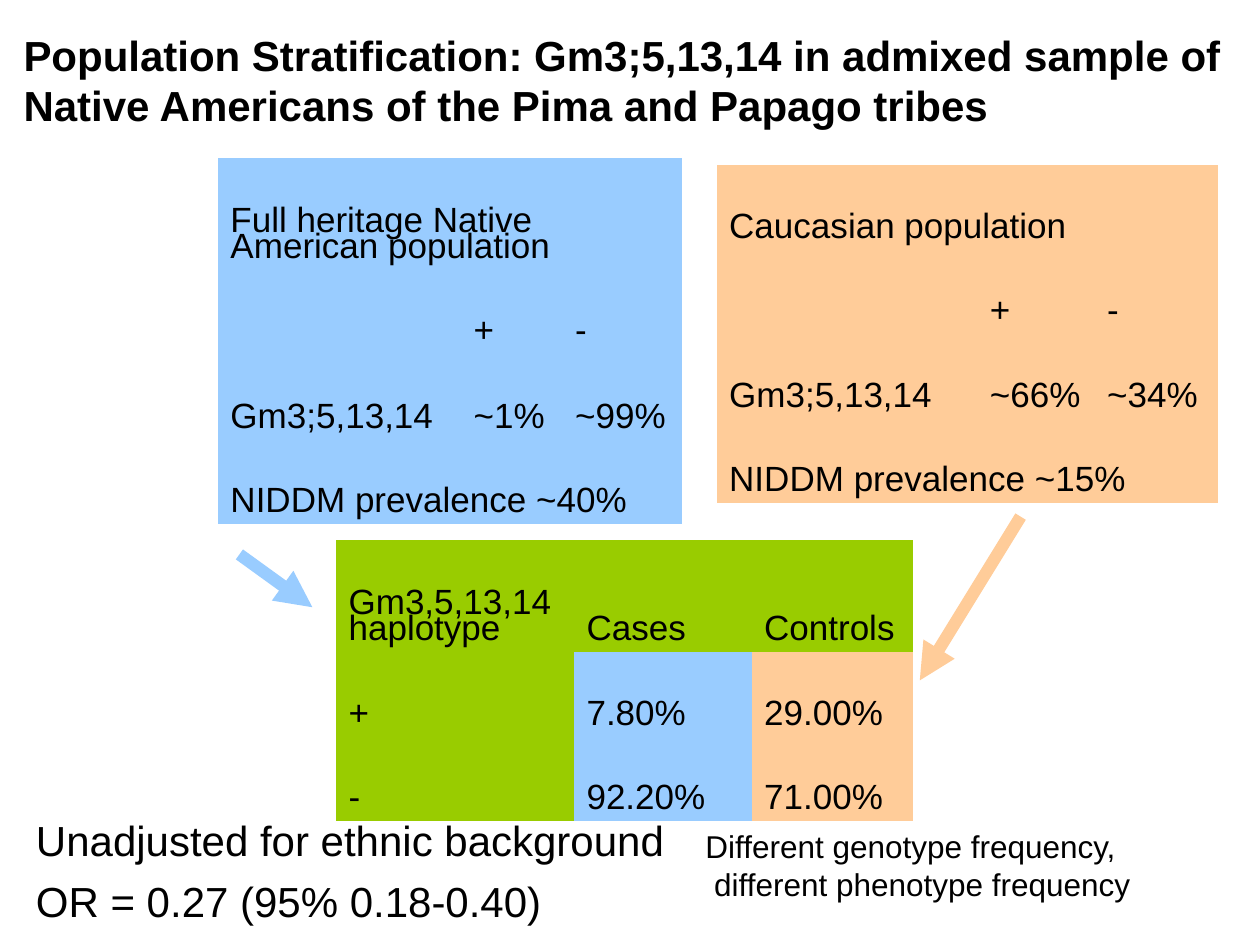
from dataclasses import dataclass

from pptx import Presentation
from pptx.dml.color import RGBColor
from pptx.enum.shapes import MSO_CONNECTOR
from pptx.enum.text import MSO_ANCHOR, MSO_AUTO_SIZE, PP_ALIGN
from pptx.oxml.ns import qn
from pptx.util import Pt
from lxml.etree import SubElement


@dataclass(frozen=True)
class Theme:
    """Colours, font and type sizes of the slide."""
    font: str = "Arial"
    text: RGBColor = RGBColor(0x00, 0x00, 0x00)
    native: RGBColor = RGBColor(0x99, 0xCC, 0xFF)
    caucasian: RGBColor = RGBColor(0xFF, 0xCC, 0x99)
    admixed: RGBColor = RGBColor(0x99, 0xCC, 0x00)
    title_size: int = 24
    table_size: int = 20
    note_size: int = 18
    arrow_width: int = 7


THEME = Theme()
NO_GRID = "{2D5ABB26-0587-4C30-8999-92F81FD0307C}"


def format_text(tf, size, bold=False, spacing=None, before=None):
    """Give every paragraph the theme font and the stated spacing."""
    for p in tf.paragraphs:
        p.alignment = PP_ALIGN.LEFT
        p.line_spacing = spacing
        p.space_before = None if before is None else Pt(before)
        for r in p.runs:
            r.font.name = THEME.font
            r.font.size = Pt(size)
            r.font.bold = bold
            r.font.color.rgb = THEME.text


def add_title(s, box, text):
    """Place the slide title in its placeholder."""
    sp = s.shapes.title
    sp.left, sp.top, sp.width, sp.height = (Pt(v) for v in box)
    tf = sp.text_frame
    tf.text = text
    tf.word_wrap = True
    tf.auto_size = MSO_AUTO_SIZE.NONE
    tf.vertical_anchor = MSO_ANCHOR.TOP
    format_text(tf, THEME.title_size, bold=True)


def add_note(s, box, text, size, spacing=None, before=None):
    """Place a wrapped text box."""
    tf = s.shapes.add_textbox(*(Pt(v) for v in box)).text_frame
    tf.word_wrap = True
    tf.text = text
    format_text(tf, size, spacing=spacing, before=before)


def format_cell(cell, text, fill):
    """Fill one cell and set its text at the bottom."""
    cell.fill.solid()
    cell.fill.fore_color.rgb = fill
    if text:
        cell.text = text
        cell.vertical_anchor = MSO_ANCHOR.BOTTOM
        cell.margin_top = Pt(28.8)
        format_text(cell.text_frame, THEME.table_size, spacing=0.66)


def add_grid(s, left, top, widths, heights, rows, fills):
    """Add a borderless table with a fill for every cell."""
    frame = s.shapes.add_table(len(heights), len(widths), Pt(left), Pt(top),
                               Pt(sum(widths)), Pt(sum(heights)))
    table = frame.table
    table.first_row = table.horz_banding = False
    for style in frame.element.iter(qn("a:tableStyleId")):
        style.text = NO_GRID
    for column, width in zip(table.columns, widths):
        column.width = Pt(width)
    for row, height, texts, colors in zip(table.rows, heights, rows, fills):
        row.height = Pt(height)
        for cell, text, color in zip(row.cells, texts, colors):
            format_cell(cell, text, color)
    return table


def add_population(s, left, top, widths, heights, name, plus, minus, prevalence, fill):
    """Add the haplotype table of one population."""
    rows = [(name, "", ""), ("", "+", "-"), ("Gm3;5,13,14", plus, minus),
            (f"NIDDM prevalence {prevalence}", "", "")]
    table = add_grid(s, left, top, widths, heights, rows, [[fill] * 3] * 4)
    for i in (0, 3):
        table.cell(i, 0).merge(table.cell(i, 2))


def add_admixed(s, left, top):
    """Add the case and control table of the admixed sample."""
    rows = [("Gm3,5,13,14 haplotype", "Cases", "Controls"),
            ("+", "7.80%", "29.00%"), ("-", "92.20%", "71.00%")]
    body = [THEME.admixed, THEME.native, THEME.caucasian]
    add_grid(s, left, top, (136, 101.5, 92.5), (64, 48.3, 48.3), rows,
             [[THEME.admixed] * 3, body, body])


def add_arrow(s, start, end, color):
    """Add a thick line with a triangle at its end."""
    line = s.shapes.add_connector(MSO_CONNECTOR.STRAIGHT,
                                  *(Pt(v) for v in start + end))
    line.line.color.rgb = color
    line.line.width = Pt(THEME.arrow_width)
    SubElement(line.line._get_or_add_ln(), qn("a:tailEnd"), type="triangle")
    SubElement(line.element.spPr, qn("a:effectLst"))


def main():
    """Build the slide and save it."""
    prs = Presentation()
    prs.slide_width, prs.slide_height = Pt(720), Pt(540)
    s = prs.slides.add_slide(prs.slide_layouts[5])
    add_title(s, (6.25, 13, 713, 65.5),
              "Population Stratification: Gm3;5,13,14 in admixed sample of "
              "Native Americans of the Pima and Papago tribes")
    add_note(s, (13.5, 469.5, 374.5, 62.5),
             "Unadjusted for ethnic background\nOR = 0.27 (95% 0.18-0.40)",
             THEME.title_size, spacing=0.7, before=15)
    add_population(s, 124.5, 90, (139, 58, 68.5), (64, 48.3, 49, 48.3),
                   "Full heritage Native American population",
                   "~1%", "~99%", "~40%", THEME.native)
    add_population(s, 409.5, 94.5, (149, 67, 70.5), (48.3,) * 4,
                   "Caucasian population", "~66%", "~34%", "~15%", THEME.caucasian)
    add_admixed(s, 192, 308.5)
    add_arrow(s, (136.8, 316.8), (178.5, 347), THEME.native)
    add_arrow(s, (583.2, 295.2), (525.6, 388.8), THEME.caucasian)
    add_note(s, (396, 469, 317, 64),
             "Different genotype frequency,\n different phenotype frequency",
             THEME.note_size)
    prs.save("out.pptx")


if __name__ == "__main__":
    main()
